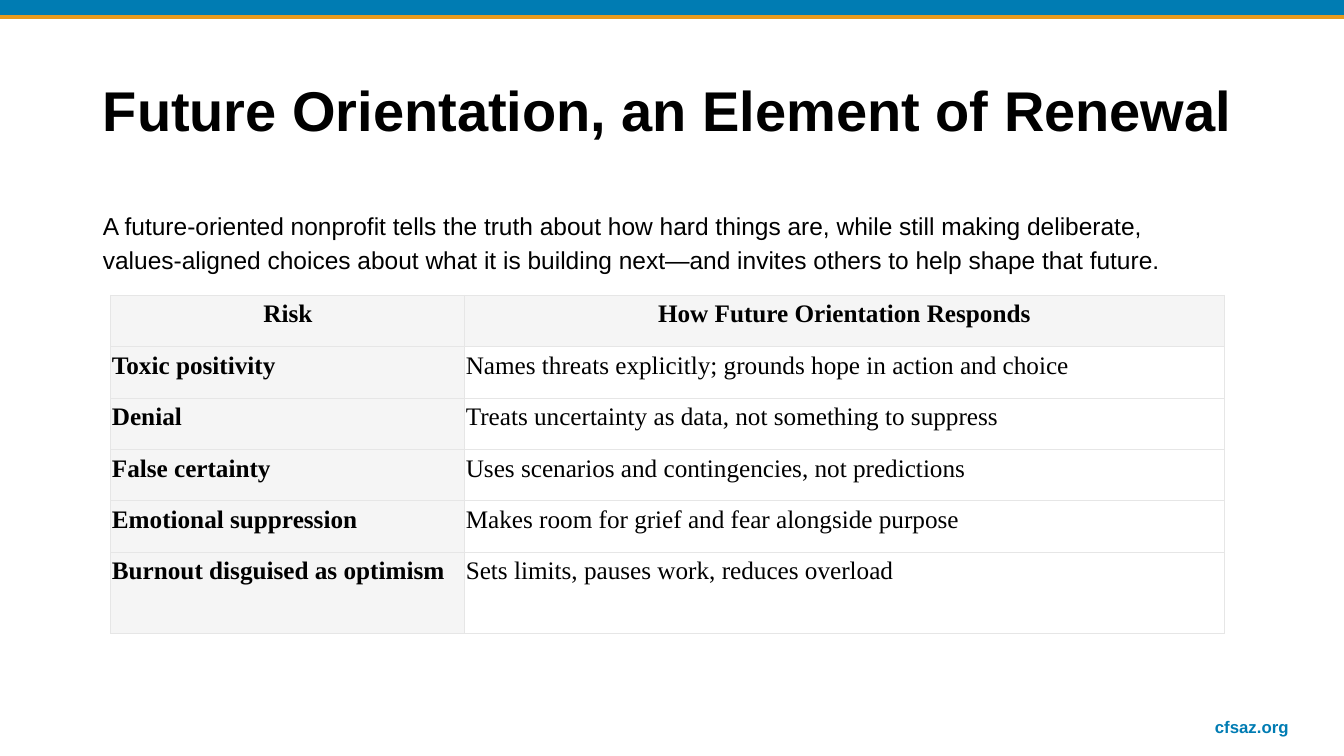
from lxml.etree import SubElement
from pptx import Presentation
from pptx.dml.color import RGBColor
from pptx.enum.shapes import MSO_CONNECTOR, MSO_SHAPE
from pptx.enum.text import MSO_ANCHOR, MSO_AUTO_SIZE, PP_ALIGN
from pptx.oxml.ns import qn
from pptx.util import Inches, Pt

BLUE = RGBColor(0x00, 0x7C, 0xB3)
ORANGE = RGBColor(0xE8, 0x9B, 0x1F)
BLACK = RGBColor(0x00, 0x00, 0x00)
LIGHT_GRAY = RGBColor(0xF5, 0xF5, 0xF5)
BORDER_GRAY = RGBColor(0xE6, 0xE6, 0xE6)

SLIDE_WIDTH, SLIDE_HEIGHT = 13.33, 7.5

TITLE = "Future Orientation, an Element of Renewal"
STATEMENT = (
    "A future‑oriented nonprofit tells the truth about how hard things are, "
    "while still making deliberate, values‑aligned choices about what it is "
    "building next—and invites others to help shape that future."
)
RISK_ROWS = [
    ("Risk", "How Future Orientation Responds"),
    ("Toxic positivity", "Names threats explicitly; grounds hope in action and choice"),
    ("Denial", "Treats uncertainty as data, not something to suppress"),
    ("False certainty", "Uses scenarios and contingencies, not predictions"),
    ("Emotional suppression", "Makes room for grief and fear alongside purpose"),
    ("Burnout disguised as optimism", "Sets limits, pauses work, reduces overload"),
]
COLUMN_WIDTHS = [3.51, 7.53]
ROW_HEIGHTS = [0.51] * 5 + [0.81]


class SlideBuilder:
    heading_font = "Arial"
    table_font = "Times New Roman"
    cell_margin = Inches(0.01)

    def __init__(self, slide):
        self.slide = slide

    def add_text(self, frame, text, size, font, color=BLACK, bold=False,
                 align=PP_ALIGN.LEFT, line_spacing=1.0):
        paragraph = frame.paragraphs[0]
        paragraph.alignment = align
        paragraph.line_spacing = line_spacing
        paragraph.space_before = Pt(0)
        run = paragraph.add_run()
        run.text = text
        run.font.size = Pt(size)
        run.font.name = font
        run.font.bold = bold
        run.font.color.rgb = color
        return paragraph

    def prepare_frame(self, shape, anchor):
        frame = shape.text_frame
        frame.word_wrap = True
        frame.auto_size = MSO_AUTO_SIZE.NONE
        frame.vertical_anchor = anchor
        return frame

    def placeholder(self, shape, box, text, size, anchor, bold=False, line_spacing=1.0):
        shape.left, shape.top, shape.width, shape.height = map(Inches, box)
        frame = self.prepare_frame(shape, anchor)
        paragraph = self.add_text(frame, text, size, self.heading_font, bold=bold,
                                  line_spacing=line_spacing)
        properties = paragraph._p.get_or_add_pPr()
        properties.set("marL", "0")
        properties.set("indent", "0")
        SubElement(properties, qn("a:buNone"))

    def text_box(self, box, text, size, color, anchor, align):
        shape = self.slide.shapes.add_textbox(*map(Inches, box))
        frame = self.prepare_frame(shape, anchor)
        self.add_text(frame, text, size, self.heading_font, color, True, align)

    def bar(self, box, color):
        shape = self.slide.shapes.add_shape(MSO_SHAPE.RECTANGLE, *map(Inches, box))
        shape.shadow.inherit = False
        shape.fill.solid()
        shape.fill.fore_color.rgb = color
        shape.line.fill.background()

    def line(self, start, end, color, width):
        connector = self.slide.shapes.add_connector(
            MSO_CONNECTOR.STRAIGHT, *map(Inches, start + end))
        connector.line.color.rgb = color
        connector.line.width = Pt(width)
        SubElement(connector._element.spPr, qn("a:effectLst"))

    def cell_borders(self, cell, color, width):
        properties = cell._tc.get_or_add_tcPr()
        for side in ("a:lnL", "a:lnR", "a:lnT", "a:lnB"):
            border = SubElement(properties, qn(side), w=str(Pt(width)))
            fill = SubElement(border, qn("a:solidFill"))
            SubElement(fill, qn("a:srgbClr"), val=str(color))

    def table(self, left, top, rows, column_widths, row_heights):
        table = self.slide.shapes.add_table(
            len(rows), len(column_widths), Inches(left), Inches(top),
            Inches(sum(column_widths)), Inches(sum(row_heights))).table
        table.horz_banding = False
        for column, width in zip(table.columns, column_widths):
            column.width = Inches(width)
        for row, height in zip(table.rows, row_heights):
            row.height = Inches(height)
        for row_index, texts in enumerate(rows):
            for column_index, text in enumerate(texts):
                is_header = row_index == 0
                is_label = is_header or column_index == 0
                cell = table.cell(row_index, column_index)
                cell.margin_left = cell.margin_right = self.cell_margin
                cell.margin_top = cell.margin_bottom = self.cell_margin
                self.cell_borders(cell, BORDER_GRAY, 0.75)
                if is_label:
                    cell.fill.solid()
                    cell.fill.fore_color.rgb = LIGHT_GRAY
                else:
                    cell.fill.background()
                self.add_text(cell.text_frame, text, 18, self.table_font, bold=is_label,
                              align=PP_ALIGN.CENTER if is_header else PP_ALIGN.LEFT,
                              line_spacing=1.15)


def main():
    presentation = Presentation()
    presentation.slide_width = Inches(SLIDE_WIDTH)
    presentation.slide_height = Inches(SLIDE_HEIGHT)
    slide = presentation.slides.add_slide(presentation.slide_layouts[1])
    builder = SlideBuilder(slide)

    # Top band
    builder.bar((0, -0.02, SLIDE_WIDTH, 0.2), BLUE)
    builder.line((0, 0.17), (SLIDE_WIDTH, 0.17), ORANGE, 2.5)

    # Title and statement
    builder.placeholder(slide.shapes.title, (0.92, 0.4, 11.5, 1.45), TITLE, 40,
                        MSO_ANCHOR.MIDDLE, bold=True, line_spacing=0.9)
    builder.placeholder(slide.placeholders[1], (0.92, 2, 11.5, 4.07), STATEMENT, 17.5,
                        MSO_ANCHOR.TOP, line_spacing=1.15)

    # Web address
    builder.text_box((9.88, 6.96, 3, 0.4), "cfsaz.org", 12, BLUE,
                     MSO_ANCHOR.BOTTOM, PP_ALIGN.RIGHT)

    # Risks and responses
    builder.table(1.1, 2.93, RISK_ROWS, COLUMN_WIDTHS, ROW_HEIGHTS)

    presentation.save("out.pptx")


if __name__ == "__main__":
    main()
